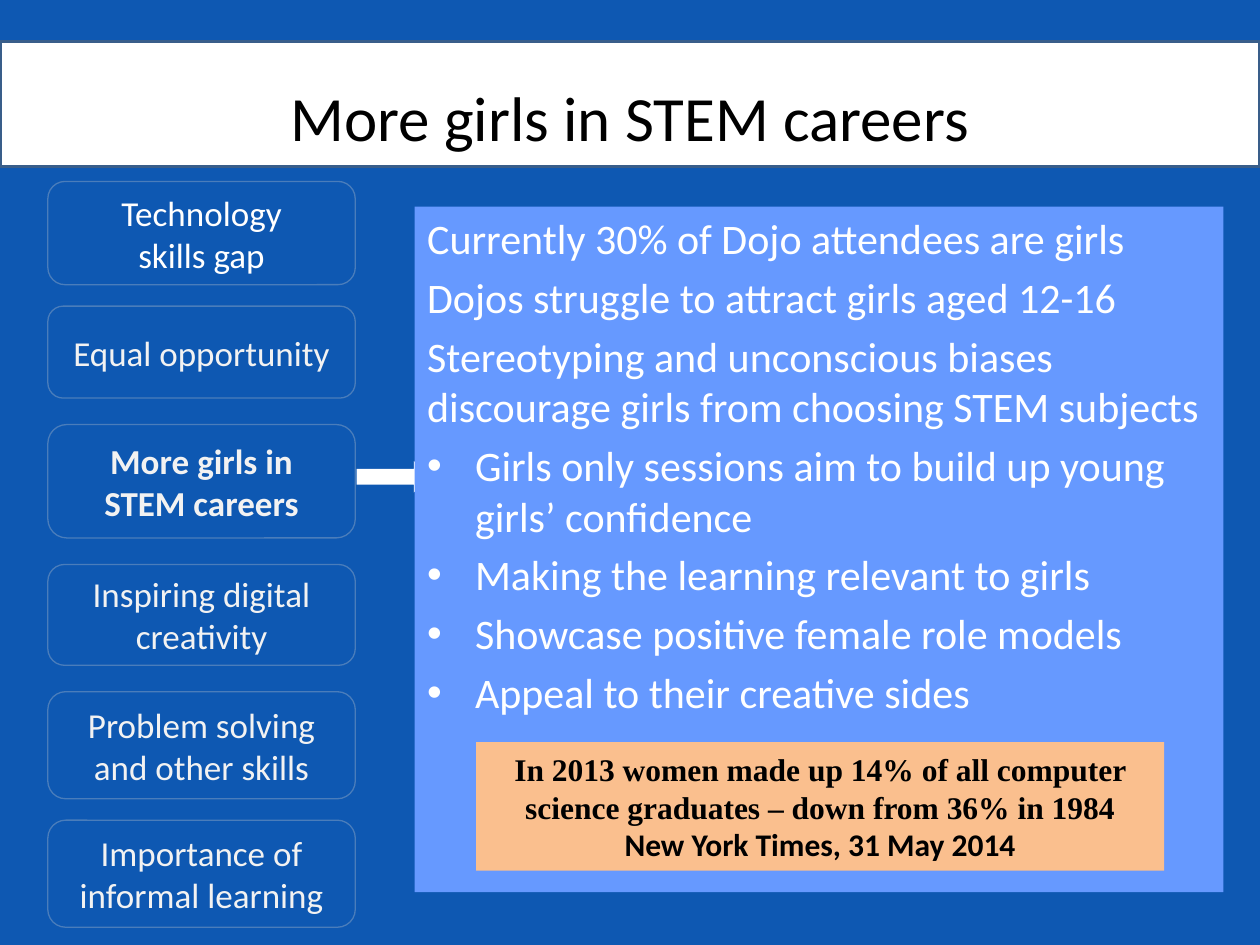
from dataclasses import dataclass

from lxml.etree import SubElement
from pptx import Presentation
from pptx.dml.color import RGBColor
from pptx.enum.shapes import MSO_SHAPE
from pptx.enum.text import MSO_ANCHOR, MSO_AUTO_SIZE, PP_ALIGN
from pptx.oxml.ns import qn
from pptx.util import Inches, Pt

WIDTH, HEIGHT = Inches(10), Inches(7.5)


@dataclass(frozen=True)
class Theme:
    background: str = "0E58B2"
    white: str = "FFFFFF"
    black: str = "000000"
    soft_white: str = "F2F2F2"
    band_line: str = "395E8A"
    topic_line: str = "4A7DBB"
    panel: str = "6699FF"
    quote: str = "FABF8E"
    sans: str = "Calibri"
    serif: str = "Times New Roman"
    title_size: int = 36
    body_size: int = 24
    topic_size: int = 20
    quote_size: int = 18


THEME = Theme()

# Text, top and height in percent of the slide height
TOPICS = [
    ("Technology\nskills gap", 19.2, 10.93),
    ("Equal opportunity", 32.4, 9.73),
    ("More girls in\nSTEM careers", 44.93, 12),
    ("Inspiring digital creativity", 59.73, 10.67),
    ("Problem solving and other skills", 73.2, 11.33),
    ("Importance of informal learning", 86.8, 11.33),
]
CURRENT_TOPIC = 2

FACTS = [
    "Currently 30% of Dojo attendees are girls",
    "Dojos struggle to attract girls aged 12-16",
    "Stereotyping and unconscious biases discourage girls from choosing STEM subjects",
]
ACTIONS = [
    "Girls only sessions aim to build up young girls’ confidence",
    "Making the learning relevant to girls",
    "Showcase positive female role models",
    "Appeal to their creative sides",
]


def box(left, top, width, height):
    """Turn percentages of the slide's width and height into lengths."""
    return (int(WIDTH * left / 100), int(HEIGHT * top / 100),
            int(WIDTH * width / 100), int(HEIGHT * height / 100))


def place(shape, bounds):
    shape.left, shape.top, shape.width, shape.height = bounds


def paint(fill, color):
    fill.solid()
    fill.fore_color.rgb = RGBColor.from_string(color)


def style(paragraph, size, color, face=THEME.sans, bold=False):
    font = paragraph.font
    font.name, font.size, font.bold = face, Pt(size), bold
    font.color.rgb = RGBColor.from_string(color)


def add_block(slide, kind, bounds, fill, line=None, line_width=0.75):
    block = slide.shapes.add_shape(kind, *bounds)
    block.shadow.inherit = False
    paint(block.fill, fill)
    if line:
        block.line.color.rgb = RGBColor.from_string(line)
        block.line.width = Pt(line_width)
    else:
        block.line.fill.background()
    return block


def add_centred_line(frame, paragraph, text, **look):
    frame.word_wrap = True
    frame.vertical_anchor = MSO_ANCHOR.MIDDLE
    paragraph.text = text
    paragraph.alignment = PP_ALIGN.CENTER
    style(paragraph, **look)


def set_bullet(paragraph, bulleted):
    properties = paragraph._p.get_or_add_pPr()
    indent = Inches(0.38) if bulleted else 0
    properties.set("marL", str(indent))
    properties.set("indent", str(-indent))
    if bulleted:
        SubElement(properties, qn("a:buChar")).set("char", "•")
    else:
        SubElement(properties, qn("a:buNone"))


def add_backdrop(slide):
    """Put the title band and the pointer behind the placeholders."""
    band = add_block(slide, MSO_SHAPE.RECTANGLE, box(0, 4.4, 100, 13.2),
                     THEME.white, THEME.band_line, 2)
    pointer = add_block(slide, MSO_SHAPE.RIGHT_ARROW,
                        box(28.3, 48.8, 5.8, 3.33), THEME.white)
    tree = slide.shapes._spTree
    for position, shape in enumerate((band, pointer), start=2):
        tree.insert(position, shape._element)


def fill_title(slide):
    title = slide.shapes.title
    place(title, box(5, 4, 90, 16.67))
    frame = title.text_frame
    frame.auto_size = MSO_AUTO_SIZE.NONE
    add_centred_line(frame, frame.paragraphs[0], "More girls in STEM careers",
                     size=THEME.title_size, color=THEME.black)


def fill_body(slide):
    body = slide.placeholders[1]
    place(body, box(32.9, 21.87, 64.2, 72.53))
    paint(body.fill, THEME.panel)
    frame = body.text_frame
    frame.auto_size = MSO_AUTO_SIZE.NONE
    for number, text in enumerate(FACTS + ACTIONS):
        paragraph = frame.add_paragraph() if number else frame.paragraphs[0]
        paragraph.text = text
        paragraph.space_before = Pt(4.8 if number else 0)
        set_bullet(paragraph, number >= len(FACTS))
        style(paragraph, THEME.body_size, THEME.white)


def add_quote(slide):
    quote = add_block(slide, MSO_SHAPE.RECTANGLE,
                      box(37.8, 78.53, 54.6, 13.6), THEME.quote)
    frame = quote.text_frame
    look = dict(size=THEME.quote_size, color=THEME.black, bold=True)
    add_centred_line(
        frame, frame.paragraphs[0],
        "In 2013 women made up 14% of all computer science graduates"
        " – down from 36% in 1984", face=THEME.serif, **look)
    add_centred_line(frame, frame.add_paragraph(),
                     "New York Times, 31 May 2014", **look)


def add_topics(slide):
    for number, (text, top, height) in enumerate(TOPICS):
        topic = add_block(slide, MSO_SHAPE.ROUNDED_RECTANGLE,
                          box(3.8, top, 24.4, height),
                          THEME.background, THEME.topic_line)
        frame = topic.text_frame
        add_centred_line(frame, frame.paragraphs[0], text,
                         size=THEME.topic_size,
                         color=THEME.soft_white if number else THEME.white,
                         bold=number == CURRENT_TOPIC)


def main():
    deck = Presentation()
    deck.slide_width, deck.slide_height = WIDTH, HEIGHT
    slide = deck.slides.add_slide(deck.slide_layouts[1])
    paint(slide.background.fill, THEME.background)
    add_backdrop(slide)
    fill_title(slide)
    fill_body(slide)
    add_quote(slide)
    add_topics(slide)
    deck.save("out.pptx")


if __name__ == "__main__":
    main()
